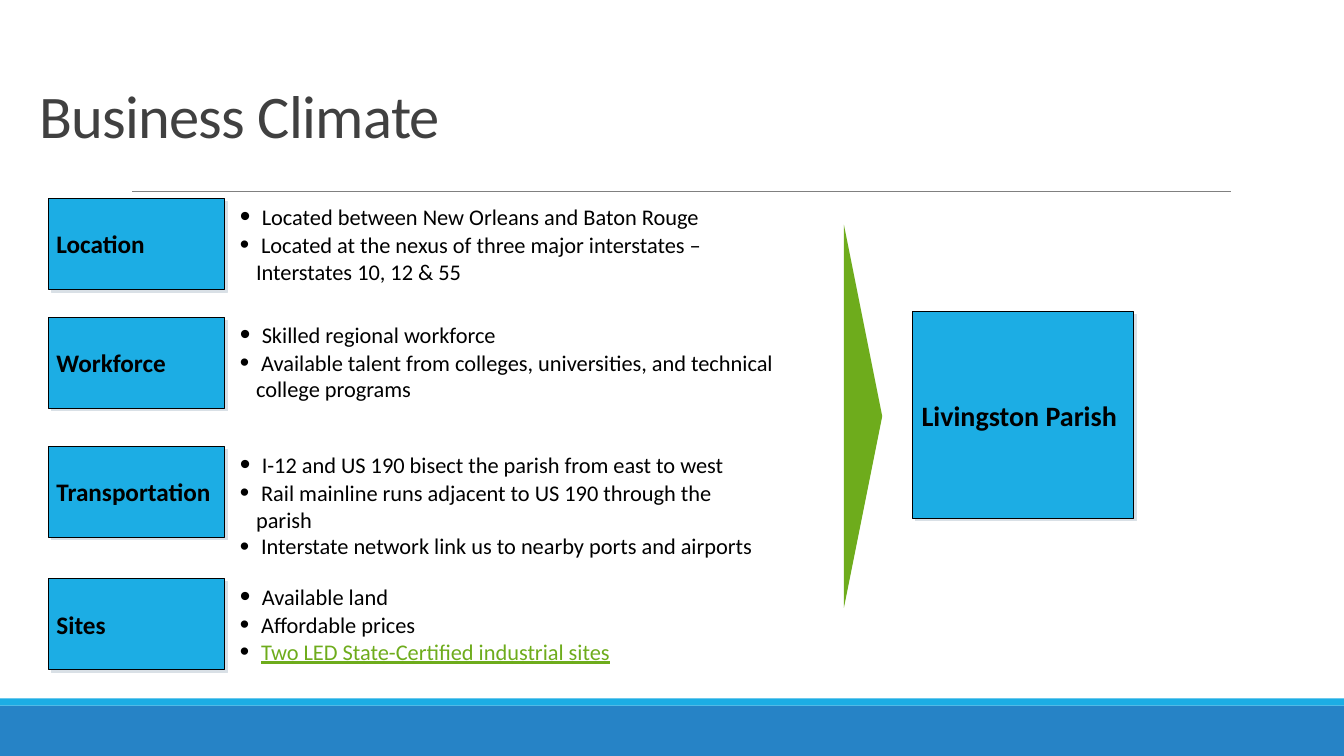
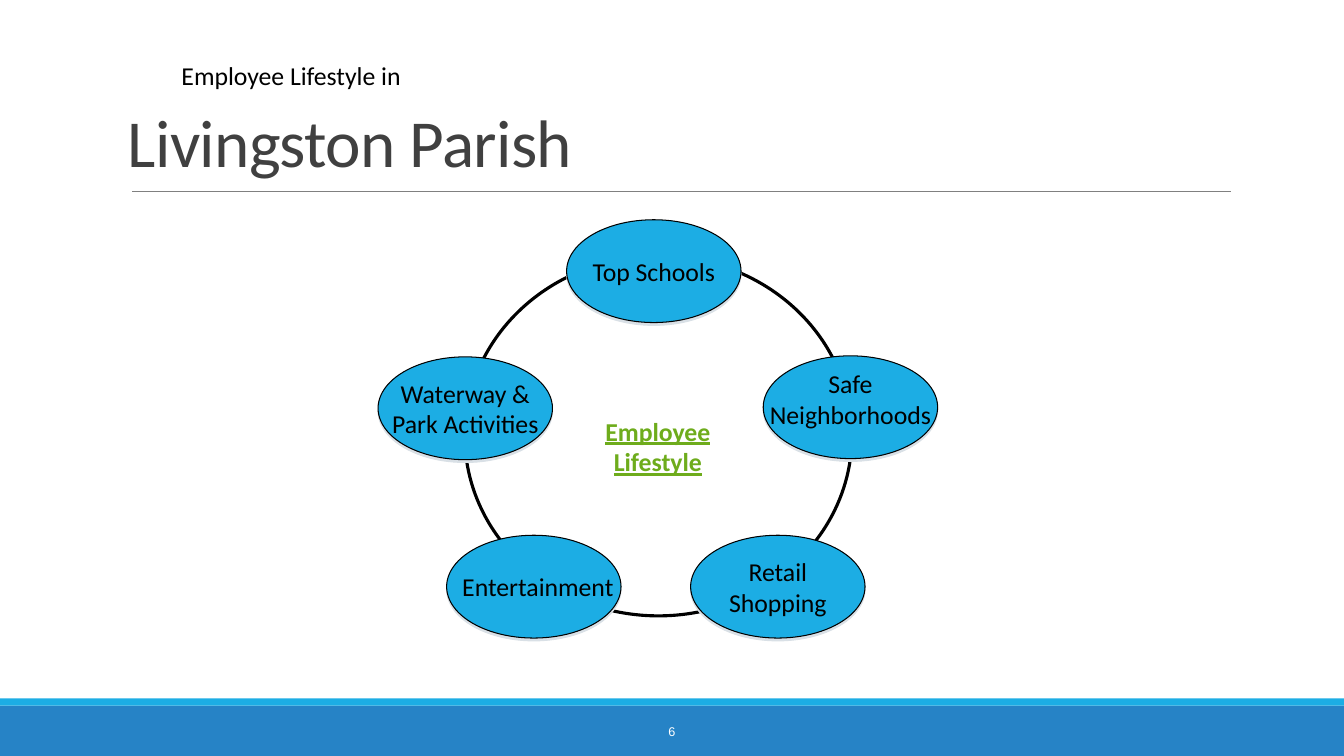
"""Build two slides on the business climate and employee lifestyle of a parish."""
import dataclasses
import typing

import lxml.etree
import pptx
import pptx.dml.color
import pptx.enum.shapes
import pptx.enum.text
import pptx.oxml.ns
import pptx.util

Inches = pptx.util.Inches
Pt = pptx.util.Pt
Shapes = pptx.enum.shapes.MSO_SHAPE
Align = pptx.enum.text.PP_ALIGN
Anchor = pptx.enum.text.MSO_ANCHOR
qn = pptx.oxml.ns.qn

COLORS = {
    "band": "2683C6",
    "accent": "1CADE4",
    "rule": "808080",
    "title": "404040",
    "text": "000000",
    "green": "6EAC1C",
    "white": "FFFFFF",
    "shadow": "D9E0E6",
}
FONT = "Calibri"
LABEL_SIZE = 18.4
HANG = 0.16


class Box(typing.NamedTuple):
    left: float
    top: float
    width: float
    height: float


class Insets(typing.NamedTuple):
    left: float = 0
    top: float = 0
    right: float = 0
    bottom: float = 0


class Shadow(typing.NamedTuple):
    distance: float
    angle: int


TITLE_INSETS = Insets(0.1, 0.05, 0.1, 0.05)
TILE_SHADOW = Shadow(2.8, 45)
OVAL_SHADOW = Shadow(2, 90)


@dataclasses.dataclass(frozen=True)
class Pillar:
    name: str
    top: float
    bullets_top: float
    bullets_width: float
    bullets: tuple[str, ...]
    linked: str = ""


@dataclasses.dataclass(frozen=True)
class Perk:
    label: str
    left: float
    top: float
    insets: Insets = Insets()


PILLARS = (
    Pillar("Location", 1.97, 1.99, 5.25, (
        "Located between New Orleans and Baton Rouge",
        "Located at the nexus of three major interstates – Interstates 10, 12 & 55",
    )),
    Pillar("Workforce", 3.15, 3.16, 5.46, (
        "Skilled regional workforce",
        "Available talent from colleges, universities, and technical college programs",
    )),
    Pillar("Transportation", 4.43, 4.45, 5.25, (
        "I-12 and US 190 bisect the parish from east to west",
        "Rail mainline runs adjacent to US 190 through the parish",
        "Interstate network link us to nearby ports and airports",
    )),
    Pillar("Sites", 5.74, 5.76, 5.25, (
        "Available land",
        "Affordable prices",
        "Two LED State-Certified industrial sites",
    ), linked="Two LED State-Certified industrial sites"),
)

PERKS = (
    Perk("Retail\nShopping", 6.85, 5.31),
    Perk("Entertainment", 4.43, 5.31, Insets(left=0.08)),
    Perk("Safe\nNeighborhoods", 7.57, 3.53, Insets(bottom=0.16)),
    Perk("Waterway &\nPark Activities", 3.75, 3.54),
    Perk("Top Schools", 5.62, 2.18),
)


def rgb(name: str) -> pptx.dml.color.RGBColor:
    return pptx.dml.color.RGBColor.from_string(COLORS[name])


def add_run(paragraph, text: str, *, size: float, color: str = "text", font: str = FONT,
            bold: bool = False, underline: bool = False, tracking: float = 0) -> None:
    run = paragraph.add_run()
    run.text = text
    run.font.name = font
    run.font.size = Pt(size)
    run.font.bold = bold
    run.font.underline = underline
    run.font.color.rgb = rgb(color)
    if tracking:
        run.font._element.set("spc", str(round(tracking * 100)))


def set_frame(shape, *, insets: Insets = Insets(), anchor=Anchor.TOP, wrap: bool = True):
    frame = shape.text_frame
    frame.word_wrap = wrap
    frame.vertical_anchor = anchor
    frame.margin_left, frame.margin_top, frame.margin_right, frame.margin_bottom = map(Inches, insets)
    return frame


def write(shape, text: str, *, insets: Insets = Insets(), anchor=Anchor.TOP, wrap: bool = True,
          align=Align.LEFT, line_spacing: float = 1.0, **font_format) -> None:
    frame = set_frame(shape, insets=insets, anchor=anchor, wrap=wrap)
    for index, line in enumerate(text.split("\n")):
        paragraph = frame.add_paragraph() if index else frame.paragraphs[0]
        paragraph.alignment = align
        paragraph.line_spacing = line_spacing
        add_run(paragraph, line, **font_format)


def add_box(slide, box: Box):
    return slide.shapes.add_textbox(*map(Inches, box))


def add_shape(slide, kind, box: Box, *, fill: str = "", line: str = "", line_width: float = 0.75,
              shadow: Shadow | None = None):
    shape = slide.shapes.add_shape(kind, *map(Inches, box))
    shape.shadow.inherit = False
    if fill:
        shape.fill.solid()
        shape.fill.fore_color.rgb = rgb(fill)
    else:
        shape.fill.background()
    if line:
        shape.line.color.rgb = rgb(line)
        shape.line.width = Pt(line_width)
    else:
        shape.line.fill.background()
    if shadow:
        effects = shape._element.spPr.find(qn("a:effectLst"))
        outer = lxml.etree.SubElement(effects, qn("a:outerShdw"), blurRad="0",
                                      dist=str(Pt(shadow.distance)),
                                      dir=str(shadow.angle * 60000), algn="ctr", rotWithShape="0")
        lxml.etree.SubElement(outer, qn("a:srgbClr"), val=COLORS["shadow"])
    return shape


def add_tile(slide, box: Box, text: str, *, size: float, inset: float) -> None:
    tile = add_shape(slide, Shapes.RECTANGLE, box, fill="accent", line="text", shadow=TILE_SHADOW)
    write(tile, text, size=size, bold=True, anchor=Anchor.MIDDLE, insets=Insets(left=inset))


def set_bullet(paragraph) -> None:
    properties = paragraph._p.get_or_add_pPr()
    properties.set("marL", str(Inches(HANG)))
    properties.set("indent", str(-Inches(HANG)))
    lxml.etree.SubElement(properties, qn("a:buSzPct"), val="120000")
    lxml.etree.SubElement(properties, qn("a:buFont"), typeface="Arial")
    lxml.etree.SubElement(properties, qn("a:buChar"), char="•")


def add_pillar(slide, pillar: Pillar) -> None:
    add_tile(slide, Box(0.48, pillar.top, 1.75, 0.9), pillar.name, size=18, inset=0.08)
    height = 0.28 * len(pillar.bullets)
    frame = set_frame(add_box(slide, Box(2.38, pillar.bullets_top, pillar.bullets_width, height)))
    for index, bullet in enumerate(pillar.bullets):
        paragraph = frame.add_paragraph() if index else frame.paragraphs[0]
        set_bullet(paragraph)
        linked = bullet == pillar.linked
        add_run(paragraph, " ", size=16 if index else 18)
        add_run(paragraph, bullet, size=16, color="green" if linked else "text", underline=linked)


def add_perk(slide, perk: Perk) -> None:
    oval = add_shape(slide, Shapes.OVAL, Box(perk.left, perk.top, 1.73, 1.02),
                     fill="accent", line="text", shadow=OVAL_SHADOW)
    write(oval, perk.label, size=LABEL_SIZE, align=Align.CENTER, anchor=Anchor.MIDDLE,
          wrap=False, insets=perk.insets)


def add_base_slide(presentation, title: str, title_box: Box, title_size: float):
    slide = presentation.slides.add_slide(presentation.slide_layouts[6])
    add_shape(slide, Shapes.RECTANGLE, Box(0, 7, 13.33, 0.5), fill="band")
    add_shape(slide, Shapes.RECTANGLE, Box(0, 6.93, 13.33, 0.07), fill="accent")
    rule = slide.shapes.add_connector(pptx.enum.shapes.MSO_CONNECTOR.STRAIGHT,
                                      Inches(1.31), Inches(1.9), Inches(12.21), Inches(1.9))
    rule.line.color.rgb = rgb("rule")
    rule.line.width = Pt(0.5)
    lxml.etree.SubElement(rule._element.spPr, qn("a:effectLst"))
    write(add_box(slide, title_box), title, size=title_size, color="title", tracking=-0.5,
          line_spacing=0.85, anchor=Anchor.BOTTOM, insets=TITLE_INSETS)
    return slide


def build_climate_slide(presentation) -> None:
    slide = add_base_slide(presentation, "Business Climate", Box(0.29, 1.23, 9.43, 0.32), 43.2)
    for pillar in PILLARS:
        add_pillar(slide, pillar)
    pointer = add_shape(slide, Shapes.ISOSCELES_TRIANGLE, Box(6.66, 3.94, 3.8, 0.38), fill="green")
    pointer.rotation = 90
    add_tile(slide, Box(9.05, 3.09, 2.19, 2.05), "Livingston Parish", size=20, inset=0.09)


def build_lifestyle_slide(presentation) -> None:
    slide = add_base_slide(presentation, "Livingston Parish", Box(1.17, 0.26, 11, 1.59), 48)
    write(add_box(slide, Box(4.03, 7.06, 5.27, 0.4)), "6", size=9, font="Arial", color="white",
          align=Align.CENTER, anchor=Anchor.MIDDLE)
    write(add_box(slide, Box(1.8, 0.59, 9.62, 0.31)), "Employee Lifestyle in", size=LABEL_SIZE)
    add_shape(slide, Shapes.OVAL, Box(4.61, 2.54, 3.84, 3.57), line="text", line_width=2.25)
    for perk in PERKS:
        add_perk(slide, perk)
    write(add_box(slide, Box(5.76, 4.12, 1.53, 0.93)), "Employee Lifestyle", size=LABEL_SIZE,
          color="green", bold=True, underline=True, align=Align.CENTER)


def main() -> None:
    presentation = pptx.Presentation()
    presentation.slide_width = Inches(13.33)
    presentation.slide_height = Inches(7.5)
    build_climate_slide(presentation)
    build_lifestyle_slide(presentation)
    presentation.save("out.pptx")


if __name__ == "__main__":
    main()
